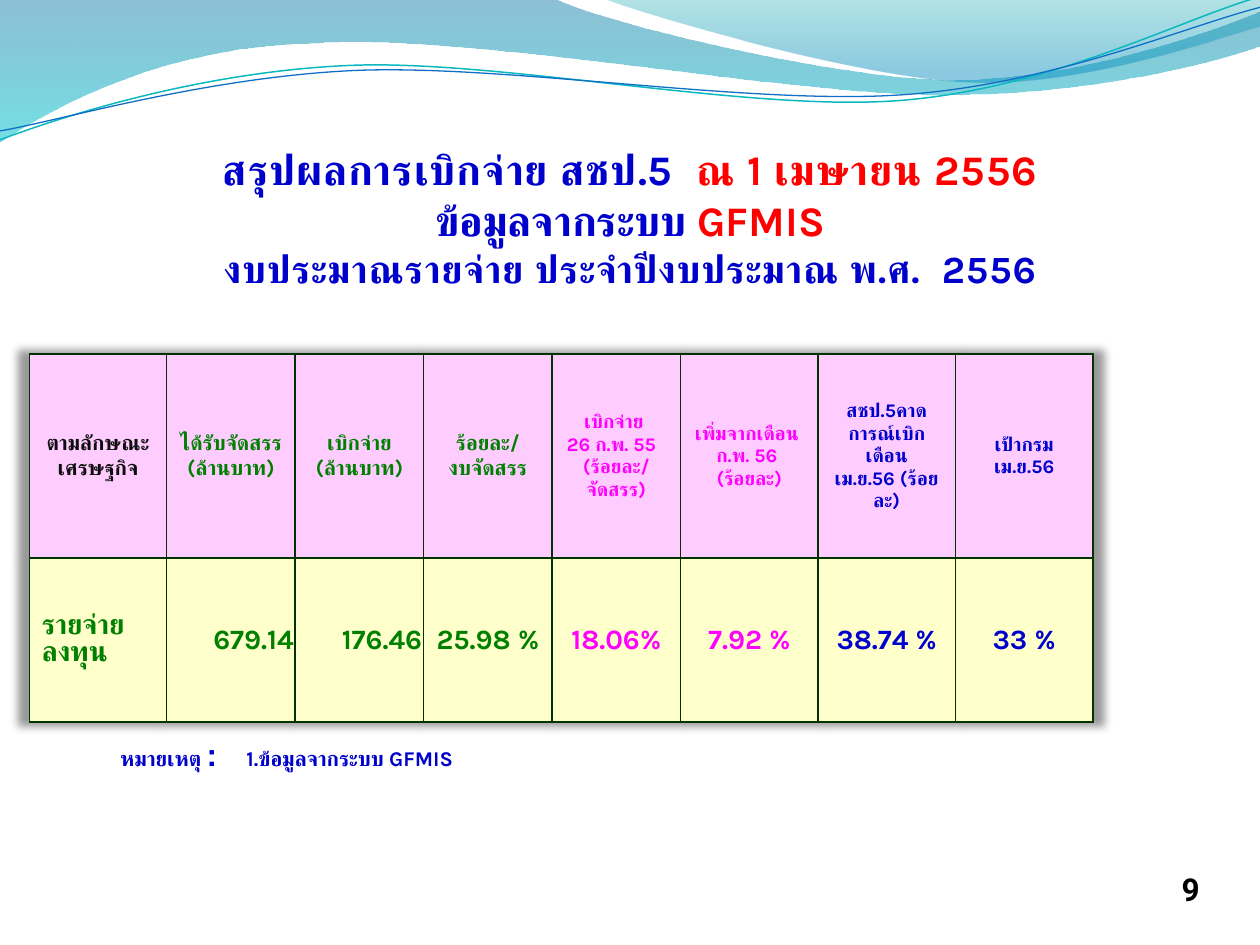
from lxml.etree import SubElement, fromstring
from pptx import Presentation
from pptx.dml.color import RGBColor
from pptx.enum.text import MSO_ANCHOR, MSO_AUTO_SIZE, PP_ALIGN
from pptx.oxml.ns import nsdecls, qn
from pptx.util import Cm, Pt

COLORS = {
    "blue": "0000CC", "red": "FF0000", "green": "008000", "magenta": "FF00FF",
    "ink": "0D0D0D", "black": "000000", "pink": "FFCCFF", "cream": "FFFFCC",
    "border": "003300", "teal line": "0AB8BF", "blue line": "0F6FC6",
    "deep blue": "0074A1", "aqua": "00C6CF", "teal": "00A1A9", "sky": "008BBF",
}

# Each wave: start point, then points (line) or six numbers (Bezier curve), in cm.
BANDS = [
    ([(0, 0), (11.18, -0.03), (12.09, 0.43, 16.87, 1.6, 19.25, 1.6),
      (21.67, 1.6, 24.33, 0.66, 25.4, 0.23), (25.43, 0.91),
      (24.97, 1.12, 22.1, 1.93, 18.95, 1.91), (15.8, 1.91, 9.7, 0.71, 6.53, 0.86),
      (3.28, 0.91, 1.17, 2.11, -0.03, 2.87), (0, 0)],
     [("deep blue", 0, 45), ("aqua", 1, 55)]),
    ([(12.17, -0.03), (12.93, 0.28, 17.32, 1.57, 19.53, 1.65),
      (21.74, 1.75, 24.41, 0.81, 25.4, 0.53), (25.4, 0), (12.17, -0.03)],
     [("teal", 0, 30), ("sky", 0.8, 45)]),
]
STRANDS = [
    ([(0, 2.82), (1.22, 2.36, 4.01, 1.45, 7.04, 1.32),
      (10.03, 1.19, 15.06, 2.26, 18.11, 2.03), (21.16, 1.8, 23.83, 0.38, 25.35, -0.05)],
     "teal line", 0.85),
    ([(0, 2.64), (1.19, 2.44, 4.17, 1.55, 7.19, 1.42),
      (10.24, 1.3, 15.16, 2.13, 18.21, 1.91), (21.23, 1.7, 23.9, 0.53, 25.4, 0.15)],
     "blue line", 0.75),
]

TITLE = [
    [("สรุปผลการเบิกจ่าย สชป.5  ", "blue", 24, 53), ("ณ 1 เมษายน 2556", "red", 24, 53)],
    [("ข้อมูลจากระบบ ", "blue", 24, 0), ("GFMIS", "red", 24, 0)],
    [("งบประมาณรายจ่าย ประจำปีงบประมาณ พ.ศ.  2556", "blue", 22, 53)],
]

# Each column: width in cm, heading lines, heading size and colour, value, value colour, alignment.
COLUMNS = [
    (2.77, ["ตามลักษณะเศรษฐกิจ"], 12, "ink", "รายจ่ายลงทุน", "green", PP_ALIGN.LEFT),
    (2.59, ["ได้รับจัดสรร", "(ล้านบาท)"], 12, "green", "679.14", "green", PP_ALIGN.RIGHT),
    (2.59, ["เบิกจ่าย", "(ล้านบาท)"], 12, "green", "176.46", "green", PP_ALIGN.RIGHT),
    (2.59, ["ร้อยละ/", "งบจัดสรร"], 12, "green", "25.98 %", "green", PP_ALIGN.CENTER),
    (2.59, ["เบิกจ่าย ", "26 ก.พ. 55  ", "(ร้อยละ/จัดสรร)"], 11, "magenta",
     "18.06%", "magenta", PP_ALIGN.CENTER),
    (2.77, ["เพิ่มจากเดือน  ก.พ. 56 ", "(ร้อยละ)"], 11, "magenta",
     "7.92 %", "magenta", PP_ALIGN.CENTER),
    (2.77, ["สชป.5คาด", "การณ์เบิก", "เดือน", "เม.ย.56 (ร้อย", "ละ)"], 11, "blue",
     "38.74 %", "blue", PP_ALIGN.CENTER),
    (2.77, ["เป้ากรม เม.ย.56"], 11, "blue", "33 %", "blue", PP_ALIGN.CENTER),
]


def rgb(name):
    return RGBColor.from_string(COLORS[name])


def set_all(target, values):
    for name, value in values.items():
        setattr(target, name, value)


def add_span(para, text, color, size, spacing=0, font="Karla"):
    span = para.add_run()
    span.text = text
    set_all(span.font, {"size": Pt(size), "bold": True, "name": font})
    span.font.color.rgb = rgb(color)
    properties = span.font._element
    properties.set("spc", str(spacing))
    SubElement(properties, qn("a:cs")).set("typeface", font)


def fill_paragraphs(frame, lines, alignment):
    """Write lines, each a list of span arguments, as paragraphs."""
    for index, spans in enumerate(lines):
        para = frame.paragraphs[0] if index == 0 else frame.add_paragraph()
        set_all(para, {"alignment": alignment, "space_before": Pt(0)})
        for span in spans:
            add_span(para, *span)


def add_wave(page, outline, close):
    """Draw an outline, joining each six-number segment into one Bezier curve."""
    points = [(Cm(x), Cm(y)) for segment in outline
              for x, y in zip(segment[::2], segment[1::2])]
    builder = page.shapes.build_freeform(*points[0])
    builder.add_line_segments(points[1:], close=close)
    wave = builder.convert_to_shape()
    wave.shadow.inherit = False
    lines = iter(list(wave._element.iter(qn("a:lnTo"))))
    for segment in outline[1:]:
        first = next(lines)
        if len(segment) == 6:
            first.tag = qn("a:cubicBezTo")
            for extra in (next(lines), next(lines)):
                first.append(extra[0])
                extra.getparent().remove(extra)
    return wave


def add_band(page, outline, stops):
    band = add_wave(page, outline, True)
    band.line.fill.background()
    band.fill.gradient()
    band.fill.gradient_angle = 270
    for stop, (color, position, opacity) in zip(band.fill.gradient_stops, stops):
        stop.color.rgb = rgb(color)
        stop.position = position
        tint = stop._gs.find(qn("a:srgbClr"))
        SubElement(tint, qn("a:alpha")).set("val", str(opacity * 1000))


def add_strand(page, outline, color, width):
    strand = add_wave(page, outline, False)
    strand.fill.background()
    strand.line.color.rgb = rgb(color)
    strand.line.width = Pt(width)


def add_title(page):
    title = page.shapes.title
    set_all(title, {"left": Cm(0.6), "top": Cm(2.77), "width": Cm(24.2), "height": Cm(3.76)})
    set_all(title.text_frame, {"word_wrap": True, "auto_size": MSO_AUTO_SIZE.NONE,
                               "vertical_anchor": MSO_ANCHOR.TOP})
    fill_paragraphs(title.text_frame, TITLE, PP_ALIGN.CENTER)


def add_text(page, left, top, width, height, spans, alignment):
    box = page.shapes.add_textbox(Cm(left), Cm(top), Cm(width), Cm(height))
    box.text_frame.word_wrap = True
    fill_paragraphs(box.text_frame, [spans], alignment)


def set_borders(cell):
    properties = cell._tc.get_or_add_tcPr()
    for index, side in enumerate(("lnL", "lnR", "lnT", "lnB")):
        properties.insert(index, fromstring(
            f'<a:{side} {nsdecls("a")} w="12700"><a:solidFill>'
            f'<a:srgbClr val="{COLORS["border"]}"/></a:solidFill></a:{side}>'))


def format_cell(cell, fill, lines, alignment):
    cell.vertical_anchor = MSO_ANCHOR.MIDDLE
    cell.fill.solid()
    cell.fill.fore_color.rgb = rgb(fill)
    set_borders(cell)
    fill_paragraphs(cell.text_frame, lines, alignment)


def add_shadow(table):
    table._tbl.tblPr.insert(0, fromstring(
        f'<a:effectLst {nsdecls("a")}><a:outerShdw blurRad="63500" sx="102000" sy="102000" '
        'algn="ctr" rotWithShape="0"><a:srgbClr val="000000"><a:alpha val="40000"/>'
        '</a:srgbClr></a:outerShdw></a:effectLst>'))


def add_spending_table(page):
    table = page.shapes.add_table(2, len(COLUMNS), Cm(0.59), Cm(7.14),
                                  Cm(21.44), Cm(7.41)).table
    add_shadow(table)
    for row, height in zip(table.rows, (4.11, 3.3)):
        row.height = Cm(height)
    for index, (width, heading, size, color, value, value_color, side) in enumerate(COLUMNS):
        table.columns[index].width = Cm(width)
        format_cell(table.cell(0, index), "pink",
                    [[(line, color, size)] for line in heading], PP_ALIGN.CENTER)
        cell = table.cell(1, index)
        format_cell(cell, "cream", [[(value, value_color, 16)]], side)
        if index:
            set_all(cell, {"margin_left": Cm(0.03), "margin_right": Cm(0.03),
                           "margin_top": Cm(0.03), "margin_bottom": 0})
    table.cell(1, 0).text_frame.paragraphs[0].line_spacing = 0.83


def main():
    deck = Presentation()
    set_all(deck, {"slide_width": Cm(25.4), "slide_height": Cm(19.05)})
    page = deck.slides.add_slide(deck.slide_layouts[5])
    for band in BANDS:
        add_band(page, *band)
    for strand in STRANDS:
        add_strand(page, *strand)
    add_title(page)
    add_spending_table(page)
    add_text(page, 2.18, 14.7, 15.47, 1.55,
             [("หมายเหตุ ", "blue", 12), (":\t", "blue", 18, 0, "Arial"),
              ("1.ข้อมูลจากระบบ GFMIS", "blue", 12)], PP_ALIGN.LEFT)
    add_text(page, 23.22, 17.42, 1.57, 1.02,
             [("9", "black", 18, 0, "Roboto")], PP_ALIGN.CENTER)
    deck.save("out.pptx")


if __name__ == "__main__":
    main()
